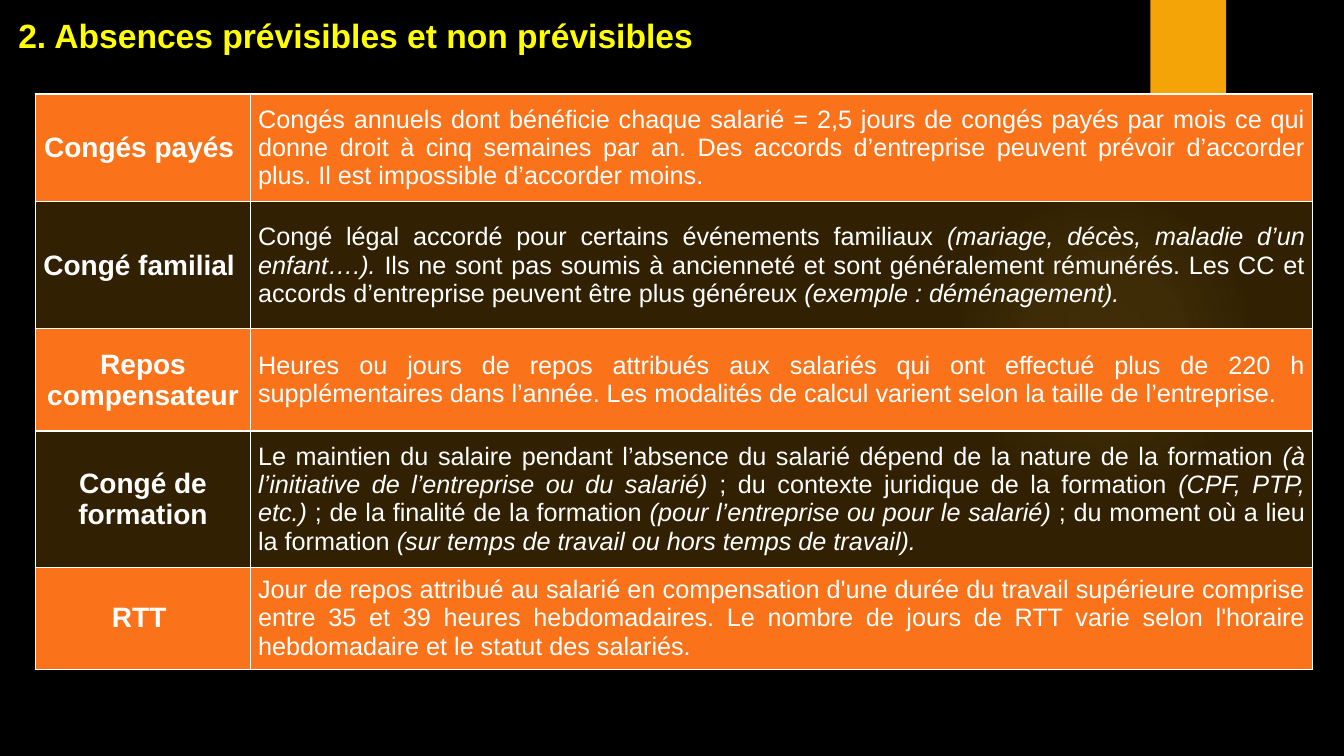
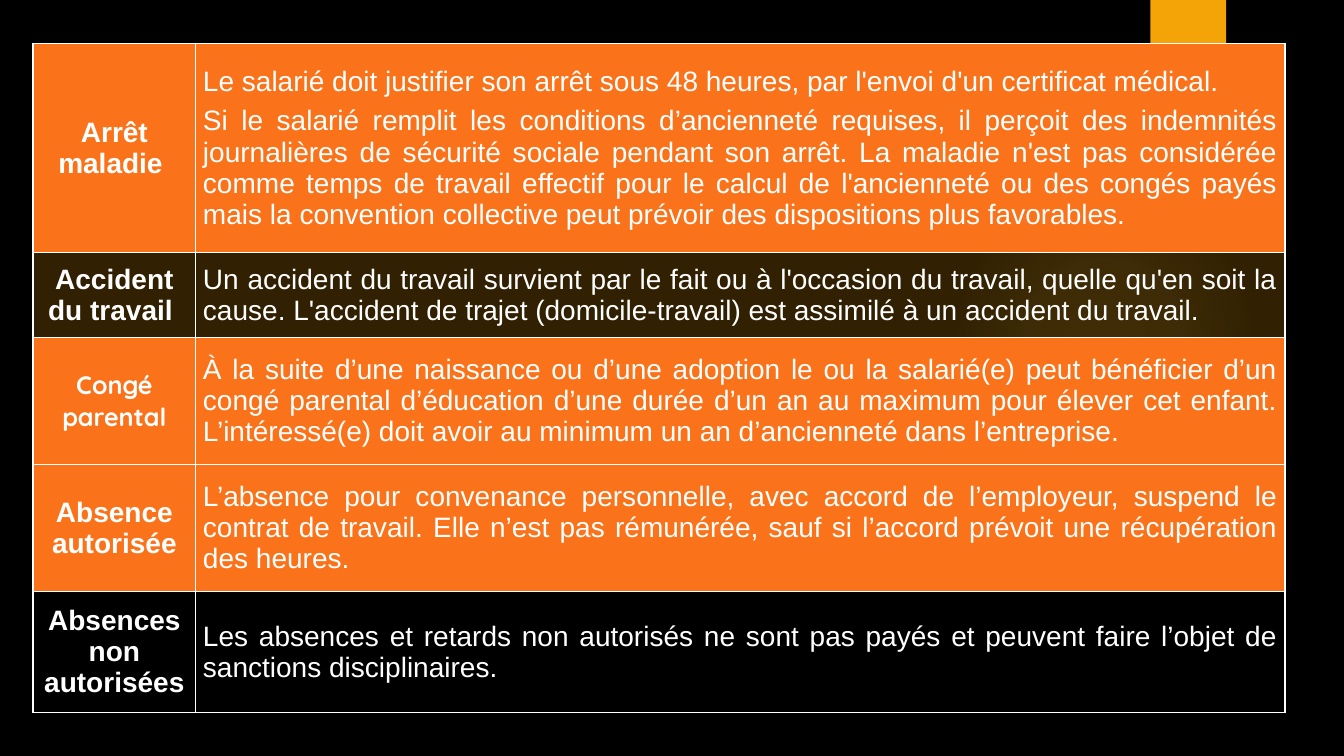
from pptx import Presentation
from pptx.dml.color import RGBColor
from pptx.enum.shapes import MSO_SHAPE as Preset
from pptx.enum.text import MSO_ANCHOR as Anchor, PP_ALIGN as Align
from pptx.oxml import parse_xml
from pptx.oxml.ns import nsdecls, qn
from pptx.util import Pt

BLACK = RGBColor(0x00, 0x00, 0x00)
WHITE = RGBColor(0xFF, 0xFF, 0xFF)
YELLOW = RGBColor(0xFF, 0xFF, 0x00)
ORANGE = RGBColor(0xFA, 0x73, 0x1A)
AMBER = RGBColor(0xF5, 0xA4, 0x08)
GLOW = RGBColor(0xFA, 0xC9, 0x6A)

FONT = "Arial"
LABEL_FONTS = {"Congé parental": {"name": "Quicksand", "size": Pt(18)}}
TITLE_FORMAT = {"name": FONT, "size": Pt(24), "bold": True}
CELL_FORMAT = {"margin_left": Pt(5.2), "margin_right": Pt(5.2), "margin_top": 0,
               "margin_bottom": 0, "vertical_anchor": Anchor.MIDDLE}

# Row fills: colour and opacity in percent, None for an open cell
SOLID = (ORANGE, 100)
TINT = (AMBER, 20)

# Each row: height, fill, label, text; asterisks enclose italics
PLANNED_ROWS = [
    (77, SOLID, "Congés payés ",
     "Congés annuels dont bénéficie chaque salarié = 2,5 jours de congés payés par mois "
     "ce qui donne droit à cinq semaines par an. Des accords d’entreprise peuvent prévoir "
     "d’accorder plus. Il est impossible d’accorder moins."),
    (90.7, TINT, "Congé familial ",
     "Congé légal accordé pour certains événements familiaux *(mariage, décès, maladie d’un "
     "enfant….). *Ils ne sont pas soumis à ancienneté et sont généralement rémunérés. Les CC "
     "et accords d’entreprise peuvent être plus généreux *(exemple : déménagement).*"),
    (73, SOLID, "Repos compensateur",
     "Heures ou jours de repos attribués aux salariés qui ont effectué plus de 220 h "
     "supplémentaires dans l’année. Les modalités de calcul varient selon la taille de "
     "l’entreprise."),
    (97.2, TINT, "Congé de formation",
     "Le maintien du salaire pendant l’absence du salarié dépend de la nature de la "
     "formation *(à l’initiative de l’entreprise ou du salarié)* ; du contexte juridique de "
     "la formation *(CPF, PTP, etc.)* ; de la finalité de la formation *(pour l’entreprise "
     "ou pour le salarié)* ; du moment où a lieu la formation *(sur temps de travail ou "
     "hors temps de travail).*"),
    (73, SOLID, "RTT ",
     "Jour de repos attribué au salarié en compensation d'une durée du travail supérieure "
     "comprise entre 35 et 39 heures hebdomadaires. Le nombre de jours de RTT varie selon "
     "l'horaire hebdomadaire et le statut des salariés."),
]
UNPLANNED_ROWS = [
    (149.6, SOLID, "Arrêt maladie ",
     "Le salarié doit justifier son arrêt sous 48 heures, par l'envoi d'un certificat "
     "médical.\n"
     "Si le salarié remplit les conditions d’ancienneté requises, il perçoit des indemnités "
     "journalières de sécurité sociale pendant son arrêt. La maladie n'est pas considérée "
     "comme temps de travail effectif pour le calcul de l'ancienneté ou des congés payés "
     "mais la convention collective peut prévoir des dispositions plus favorables."),
    (60.5, TINT, "Accident du travail ",
     "Un accident du travail survient par le fait ou à l'occasion du travail, quelle qu'en "
     "soit la cause. L'accident de trajet (domicile-travail) est assimilé à un accident du "
     "travail."),
    (90.7, SOLID, "Congé parental",
     "À la suite d’une naissance ou d’une adoption le ou la salarié(e) peut bénéficier d’un "
     "congé parental d’éducation d’une durée d’un an au maximum pour élever cet enfant. "
     "L’intéressé(e) doit avoir au minimum un an d’ancienneté dans l’entreprise."),
    (90.7, SOLID, "Absence\nautorisée",
     "L’absence pour convenance personnelle, avec accord de l’employeur, suspend le contrat "
     "de travail. Elle n’est pas rémunérée, sauf si l’accord prévoit une récupération des "
     "heures."),
    (86.4, None, "Absences non autorisées",
     "Les absences et retards non autorisés ne sont pas payés et peuvent faire l’objet de "
     "sanctions disciplinaires."),
]


def apply_format(target, values):
    for name, value in values.items():
        setattr(target, name, value)


def set_font(font, values, color):
    apply_format(font, values)
    font.color.rgb = color


def add_plain_shape(slide, preset, box, color):
    shape = slide.shapes.add_shape(preset, *map(Pt, box))
    shape.shadow.inherit = False
    shape.fill.solid()
    shape.fill.fore_color.rgb = color
    shape.line.fill.background()
    return shape


def add_backdrop(slide):
    # Soft round glow
    glow = add_plain_shape(slide, Preset.OVAL, (677.5, 131.8, 221.8, 221.8), GLOW)
    stops = "".join(
        f'<a:gs pos="{position}000"><a:srgbClr val="{GLOW}">'
        f'<a:alpha val="{opacity}000"/></a:srgbClr></a:gs>'
        for position, opacity in ((0, 7), (36, 6), (69, 0)))
    gradient = parse_xml(
        f'<a:gradFill {nsdecls("a")}><a:gsLst>{stops}</a:gsLst><a:path path="circle">'
        '<a:fillToRect l="50000" t="50000" r="50000" b="50000"/></a:path></a:gradFill>')
    properties = glow._element.spPr
    properties.replace(properties.find(qn("a:solidFill")), gradient)

    # Amber tab with its shadow
    tab = add_plain_shape(slide, Preset.RECTANGLE, (821.8, 0, 54, 90), AMBER)
    tab._element.spPr.find(qn("a:effectLst")).append(parse_xml(
        f'<a:outerShdw {nsdecls("a")} blurRad="{Pt(3)}" dist="{Pt(2)}" dir="5400000" '
        f'rotWithShape="0"><a:srgbClr val="{BLACK}"><a:alpha val="45000"/></a:srgbClr>'
        '</a:outerShdw>'))


def add_title(slide, box, text):
    frame = slide.shapes.add_textbox(*map(Pt, box)).text_frame
    apply_format(frame, {"word_wrap": True, "vertical_anchor": Anchor.BOTTOM})
    run = frame.paragraphs[0].add_run()
    run.text = text
    set_font(run.font, TITLE_FORMAT, YELLOW)


def paint_cell(cell, fill):
    properties = cell._tc.get_or_add_tcPr()
    if fill is None:
        cell.fill.background()
    else:
        color, opacity = fill
        cell.fill.solid()
        cell.fill.fore_color.rgb = color
        if opacity < 100:
            properties.find(".//" + qn("a:srgbClr")).append(
                parse_xml(f'<a:alpha {nsdecls("a")} val="{opacity}000"/>'))
    # Borders stand before the fill
    for index, side in enumerate("LRTB"):
        properties.insert(index, parse_xml(
            f'<a:ln{side} {nsdecls("a")} w="{Pt(1)}"><a:solidFill>'
            f'<a:srgbClr val="{WHITE}"/></a:solidFill></a:ln{side}>'))


def write_cell(cell, text, alignment, gap, font_format):
    apply_format(cell, CELL_FORMAT)
    frame = cell.text_frame
    for index, line in enumerate(text.split("\n")):
        paragraph = frame.add_paragraph() if index else frame.paragraphs[0]
        paragraph.alignment = alignment
        if index:
            paragraph.space_before = Pt(gap)
        for part, piece in enumerate(line.split("*")):
            if piece:
                run = paragraph.add_run()
                run.text = piece
                set_font(run.font, {**font_format, "italic": part % 2 == 1}, WHITE)


def add_absence_table(slide, left, top, widths, rows, text_size):
    height = sum(row[0] for row in rows)
    table = slide.shapes.add_table(
        len(rows), 2, Pt(left), Pt(top), Pt(sum(widths)), Pt(height)).table
    apply_format(table, {"first_row": False, "horz_banding": False})
    for column, width in zip(table.columns, widths):
        column.width = Pt(width)
    for index, (row_height, fill, label, text) in enumerate(rows):
        table.rows[index].height = Pt(row_height)
        label_cell, text_cell = table.rows[index].cells
        label_format = {"name": FONT, "size": Pt(20), "bold": True,
                        **LABEL_FONTS.get(label, {})}
        text_format = {"name": FONT, "size": Pt(text_size), "bold": False}
        write_cell(label_cell, label, Align.CENTER, 0, label_format)
        write_cell(text_cell, text, Align.JUSTIFY, 6, text_format)
        for cell in (label_cell, text_cell):
            paint_cell(cell, fill)


def add_slide(presentation):
    slide = presentation.slides.add_slide(presentation.slide_layouts[6])
    slide.background.fill.solid()
    slide.background.fill.fore_color.rgb = BLACK
    add_backdrop(slide)
    return slide


def main():
    presentation = Presentation()
    apply_format(presentation, {"slide_width": Pt(960), "slide_height": Pt(540)})

    # Planned leave
    slide = add_slide(presentation)
    add_title(slide, (6, 9.4, 808.6, 33.8), "2. Absences prévisibles et non prévisibles")
    add_absence_table(slide, 25.2, 67.2, (154, 758.2), PLANNED_ROWS, 18)

    # Unplanned absences
    slide = add_slide(presentation)
    add_absence_table(slide, 23.6, 31, (116.2, 778), UNPLANNED_ROWS, 20)

    presentation.save("out.pptx")


if __name__ == "__main__":
    main()
